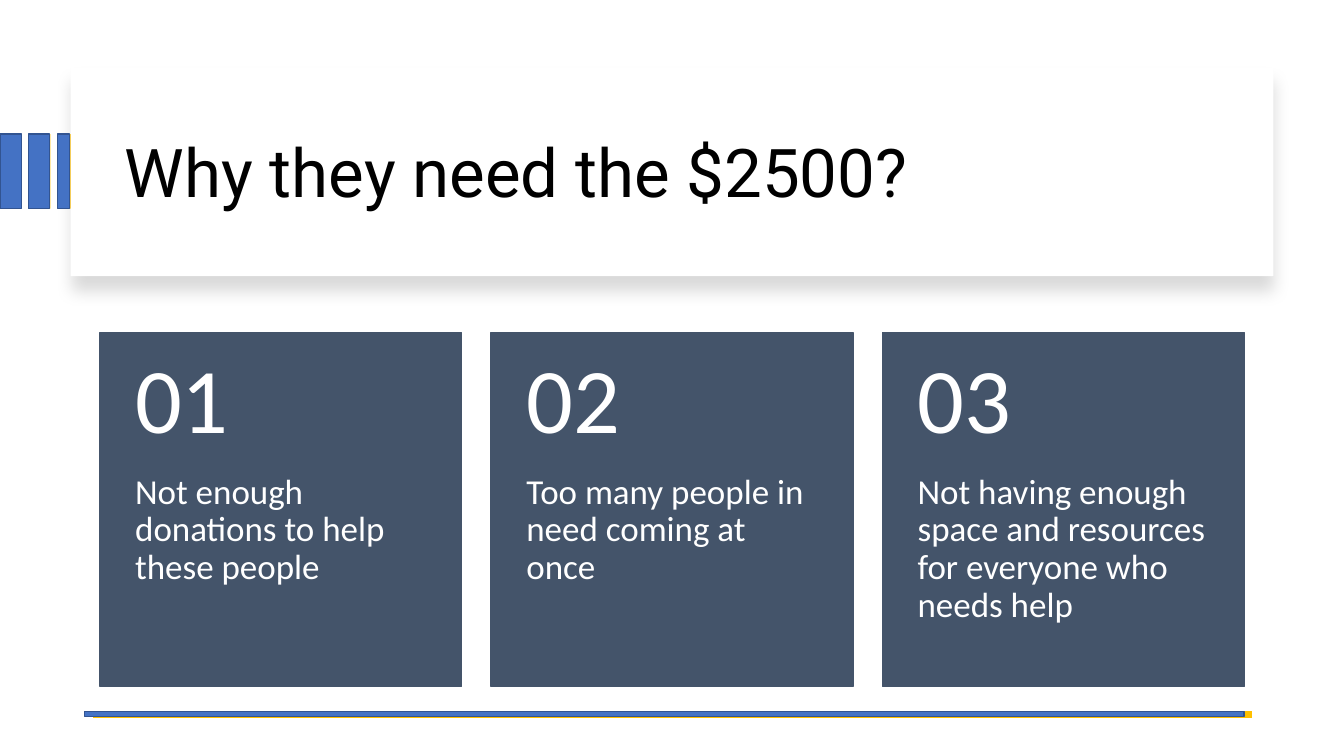
from dataclasses import dataclass

from lxml.etree import SubElement
from pptx import Presentation
from pptx.dml.color import RGBColor
from pptx.enum.shapes import MSO_CONNECTOR as Connector, MSO_SHAPE as Preset
from pptx.enum.text import MSO_ANCHOR as Anchor
from pptx.oxml.ns import qn
from pptx.util import Inches, Pt


@dataclass(frozen=True)
class Theme:
    white: str = "FFFFFF"
    black: str = "000000"
    slate: str = "44546A"
    blue: str = "4472C4"
    blue_edge: str = "325491"
    gold: str = "FFC000"
    title_font: str = "Roboto"
    body_font: str = "Calibri"
    title_size: float = 48
    number_size: float = 66
    body_size: float = 25
    edge: float = 1
    rule: float = 4.5


@dataclass(frozen=True)
class Area:
    """A rectangle in percent of the slide's width and height."""
    left: float
    top: float
    width: float
    height: float


@dataclass(frozen=True)
class Card:
    number: str
    reason: str


THEME = Theme()
CARDS = [
    Card("01", "Not enough donations to help these people"),
    Card("02", "Too many people in need coming at once"),
    Card("03", "Not having enough space and resources for everyone who needs help"),
]

# Card grid, in percent of the slide
CARD_LEFT, CARD_TOP, CARD_PITCH = 7.43, 44, 29.11
CARD_WIDTH, CARD_HEIGHT, NUMBER_HEIGHT = 26.93, 46.8, 18.67
SIDE_INSET, NUMBER_INSET, BODY_INSET = 2.63, 2.4, 4.8

# Title panel and accents
PANEL = Area(5.25, 8.93, 89.5, 27.6)
TITLE = Area(8.55, 11.87, 83.5, 22.67)
STRIPE_TOP, STRIPE_WIDTH, STRIPE_HEIGHT = 17.73, 1.58, 9.87
GOLD_STRIPES = [(2.18, STRIPE_WIDTH), (4.43, STRIPE_WIDTH)]
BLUE_STRIPES = [(0, STRIPE_WIDTH), (2.1, STRIPE_WIDTH), (4.28, 0.9)]
RULE_LEFT, RULE_RIGHT, RULE_TOP = 6.9, 93.17, 94.53
BAR = Area(6.3, 94.13, 86.27, 0.67)

deck = Presentation()
deck.slide_width, deck.slide_height = Inches(13.33), Inches(7.5)
page = deck.slides.add_slide(deck.slide_layouts[6])


def across(share: float) -> int:
    return round(deck.slide_width * share / 100)


def down(share: float) -> int:
    return round(deck.slide_height * share / 100)


def place(area: Area) -> tuple[int, int, int, int]:
    return across(area.left), down(area.top), across(area.width), down(area.height)


def add_box(area: Area, fill: str, edge: str | None = None):
    box = page.shapes.add_shape(Preset.RECTANGLE, *place(area))
    box.shadow.inherit = False
    box.fill.solid()
    box.fill.fore_color.rgb = RGBColor.from_string(fill)
    if edge:
        box.line.color.rgb = RGBColor.from_string(edge)
        box.line.width = Pt(THEME.edge)
    else:
        box.line.fill.background()
    return box


def add_text(area: Area, text: str, *, font: str, size: float, color: str,
             anchor: Anchor = Anchor.TOP, side: float = 0.75,
             above: float = 0.67, below: float = 0.67) -> None:
    frame = page.shapes.add_textbox(*place(area)).text_frame
    frame.word_wrap = True
    frame.vertical_anchor = anchor
    frame.margin_left = frame.margin_right = across(side)
    frame.margin_top, frame.margin_bottom = down(above), down(below)
    para = frame.paragraphs[0]
    para.line_spacing = 0.9
    span = para.add_run()
    span.text = text
    span.font.name, span.font.size = font, Pt(size)
    span.font.color.rgb = RGBColor.from_string(color)


def add_soft_shadow(box, color: str) -> None:
    effects = box._element.spPr.find(qn("a:effectLst"))
    shadow = SubElement(effects, qn("a:outerShdw"), blurRad=str(Pt(11)),
                        dist=str(Pt(10)), dir="5400000", algn="t", rotWithShape="0")
    tint = SubElement(shadow, qn("a:srgbClr"), val=color)
    SubElement(tint, qn("a:alpha"), val="15000")


def add_stripes(stripes: list[tuple[float, float]], fill: str,
                edge: str | None = None) -> None:
    for left, width in stripes:
        add_box(Area(left, STRIPE_TOP, width, STRIPE_HEIGHT), fill, edge)


def add_rule() -> None:
    rule = page.shapes.add_connector(Connector.STRAIGHT, across(RULE_RIGHT), down(RULE_TOP),
                                     across(RULE_LEFT), down(RULE_TOP))
    rule.line.color.rgb = RGBColor.from_string(THEME.gold)
    rule.line.width = Pt(THEME.rule)
    SubElement(rule._element.spPr, qn("a:effectLst"))


def add_card(column: int, card: Card) -> None:
    left = CARD_LEFT + column * CARD_PITCH
    add_box(Area(left, CARD_TOP, CARD_WIDTH, CARD_HEIGHT), THEME.slate, THEME.slate)
    add_text(Area(left, CARD_TOP + NUMBER_HEIGHT, CARD_WIDTH, CARD_HEIGHT - NUMBER_HEIGHT),
             card.reason, font=THEME.body_font, size=THEME.body_size, color=THEME.white,
             side=SIDE_INSET, above=0, below=BODY_INSET)
    add_text(Area(left, CARD_TOP, CARD_WIDTH, NUMBER_HEIGHT), card.number,
             font=THEME.body_font, size=THEME.number_size, color=THEME.white,
             anchor=Anchor.MIDDLE, side=SIDE_INSET, above=NUMBER_INSET, below=NUMBER_INSET)


def main() -> None:
    # Title panel over the gold stripes
    add_stripes(GOLD_STRIPES, THEME.gold)
    add_soft_shadow(add_box(PANEL, THEME.white), THEME.black)
    add_text(TITLE, "Why they need the $2500?", font=THEME.title_font,
             size=THEME.title_size, color=THEME.black, anchor=Anchor.MIDDLE)
    add_rule()

    # Numbered reasons
    for column, card in enumerate(CARDS):
        add_card(column, card)

    # Blue accents
    add_stripes(BLUE_STRIPES, THEME.blue, THEME.blue_edge)
    add_box(BAR, THEME.blue, THEME.blue_edge)
    deck.save("out.pptx")


if __name__ == "__main__":
    main()
